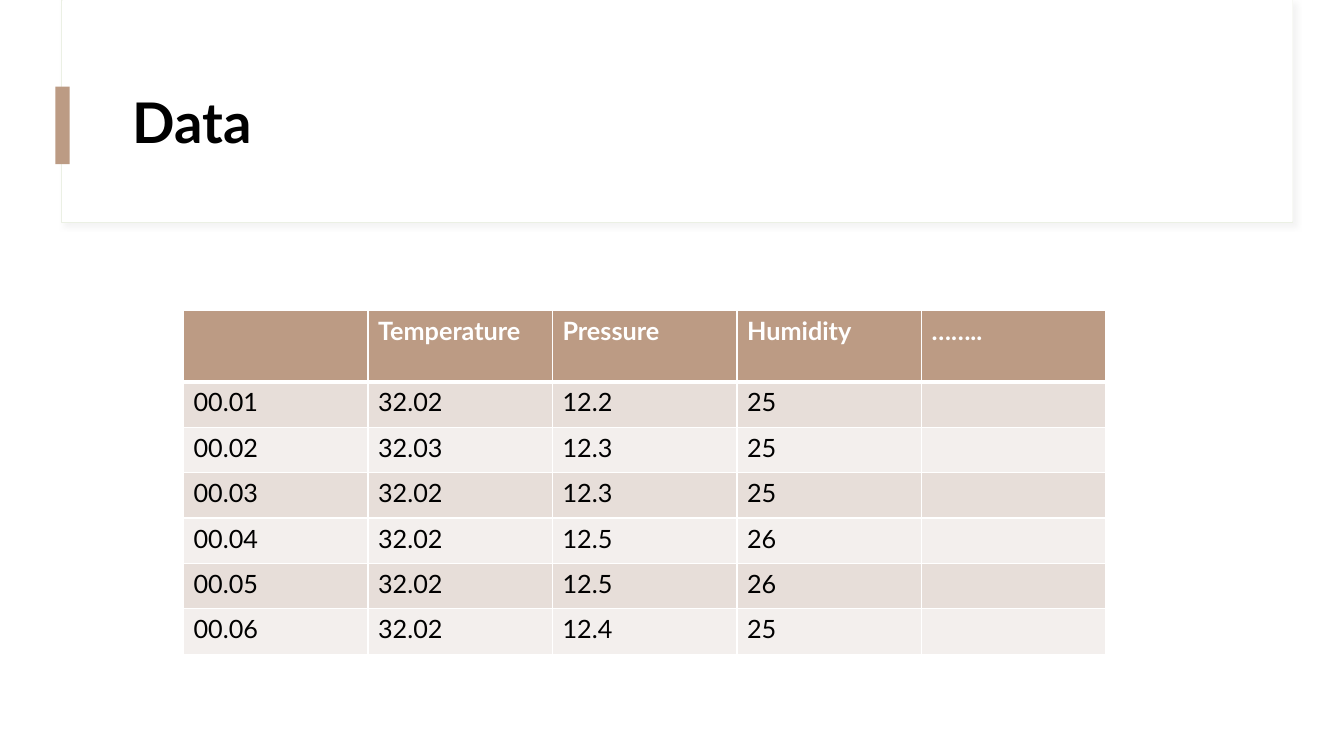
"""Build the data slide: a title panel above a table of sensor readings."""
from dataclasses import dataclass
from typing import Any

from lxml.etree import SubElement as Sub
from pptx import Presentation as Deck
from pptx.dml.color import RGBColor as Rgb
from pptx.enum.shapes import MSO_SHAPE as Form
from pptx.enum.text import MSO_ANCHOR as Anchor
from pptx.oxml import parse_xml
from pptx.oxml.ns import nsdecls, qn
from pptx.util import Inches, Pt


@dataclass(frozen=True)
class Theme:
    """Hold the colours and type sizes of the slide."""
    font: str = "Lato"
    white: str = "FFFFFF"
    black: str = "000000"
    tan: str = "BC9B84"
    edge: str = "EBF0E4"
    shade: str = "D9D9D9"
    bands: tuple[str, str] = ("E7DED9", "F3EFED")
    title: int = 40
    body: int = 18


@dataclass(frozen=True)
class Box:
    """Describe one plain rectangle, in inches."""
    left: float
    top: float
    width: float
    height: float
    fill: str
    line: str = ""
    shade: str = ""


LOOK = Theme()
BOXES = (
    Box(0.61, 0, 12.21, 2.21, LOOK.white, LOOK.edge, LOOK.shade),
    Box(0.62, 0, 12.2, 2.2, LOOK.white),
    Box(0.55, 0.86, 0.14, 0.77, LOOK.tan),
)
HEAD = ("", "Temperature", "Pressure", "Humidity", "……..")
DATA = (
    ("00.01", "32.02", "12.2", "25", ""),
    ("00.02", "32.03", "12.3", "25", ""),
    ("00.03", "32.02", "12.3", "25", ""),
    ("00.04", "32.02", "12.5", "26", ""),
    ("00.05", "32.02", "12.5", "26", ""),
    ("00.06", "32.02", "12.4", "25", ""),
)


def apply(item: Any, form: dict[str, Any]) -> None:
    """Set each attribute named in the format."""
    for name, value in form.items():
        setattr(item, name, value)


def paint(item: Any, tint: str) -> None:
    """Give a shape or cell a solid fill."""
    item.fill.solid()
    item.fill.fore_color.rgb = Rgb.from_string(tint)


def write(frame: Any, text: str, size: int, tint: str, bold: bool) -> None:
    """Put one styled line of text in a frame."""
    line = frame.paragraphs[0]
    form = {"name": LOOK.font, "size": Pt(size), "bold": bold}
    fonts = [line.font]
    if text:
        run = line.add_run()
        run.text = text
        fonts.append(run.font)
    for font in fonts:
        apply(font, form)
        font.color.rgb = Rgb.from_string(tint)


def draw_box(slide: Any, box: Box) -> None:
    """Draw a rectangle with its optional line and shadow."""
    place = map(Inches, (box.left, box.top, box.width, box.height))
    shape = slide.shapes.add_shape(Form.RECTANGLE, *place)
    shape.shadow.inherit = False
    paint(shape, box.fill)
    if box.line:
        shape.line.color.rgb = Rgb.from_string(box.line)
        shape.line.width = Pt(0.75)
    else:
        shape.line.fill.background()
    if box.shade:
        effect = shape._element.spPr.find(qn("a:effectLst"))
        cast = Sub(effect, qn("a:outerShdw"), blurRad=str(Pt(4)),
                   dist=str(Pt(3)), dir="2700000", rotWithShape="0")
        tint = Sub(cast, qn("a:srgbClr"), val=box.shade)
        Sub(tint, qn("a:alpha"), val="30000")


def draw_title(slide: Any, text: str) -> None:
    """Draw the slide title."""
    place = map(Inches, (1.22, 0.6, 11.12, 1.29))
    frame = slide.shapes.add_textbox(*place).text_frame
    apply(frame, {"word_wrap": True, "vertical_anchor": Anchor.MIDDLE})
    write(frame, text, LOOK.title, LOOK.black, True)
    frame.paragraphs[0].line_spacing = 0.9


def edge_cell(cell: Any, sides: dict[str, int]) -> None:
    """Rule the sides of a cell in white, by width in points."""
    props = cell._tc.get_or_add_tcPr()
    for spot, (side, width) in enumerate(sides.items()):
        props.insert(spot, parse_xml(
            f'<a:ln{side} {nsdecls("a")} w="{Pt(width)}"><a:solidFill>'
            f'<a:srgbClr val="{LOOK.white}"/></a:solidFill></a:ln{side}>'))


def draw_table(slide: Any) -> None:
    """Draw the readings under a taller header row."""
    rows = (HEAD, *DATA)
    place = map(Inches, (1.82, 3.08, 9.16, 3.42))
    table = slide.shapes.add_table(len(rows), len(HEAD), *place).table
    for col in table.columns:
        col.width = Inches(1.83)
    for i, texts in enumerate(rows):
        head = i == 0
        table.rows[i].height = Inches(0.71 if head else 0.45)
        fill = LOOK.tan if head else LOOK.bands[(i - 1) % 2]
        tint = LOOK.white if head else LOOK.black
        sides = {"L": 1, "R": 1, "T": 3 if i == 1 else 1, "B": 3 if head else 1}
        for j, text in enumerate(texts):
            cell = table.cell(i, j)
            paint(cell, fill)
            write(cell.text_frame, text, LOOK.body, tint, head)
            edge_cell(cell, sides)


def main() -> None:
    """Build and save the deck."""
    deck = Deck()
    apply(deck, {"slide_width": Inches(13.33), "slide_height": Inches(7.5)})
    slide = deck.slides.add_slide(deck.slide_layouts[6])
    for box in BOXES:
        draw_box(slide, box)
    draw_title(slide, "Data")
    draw_table(slide)
    deck.save("out.pptx")


if __name__ == "__main__":
    main()
